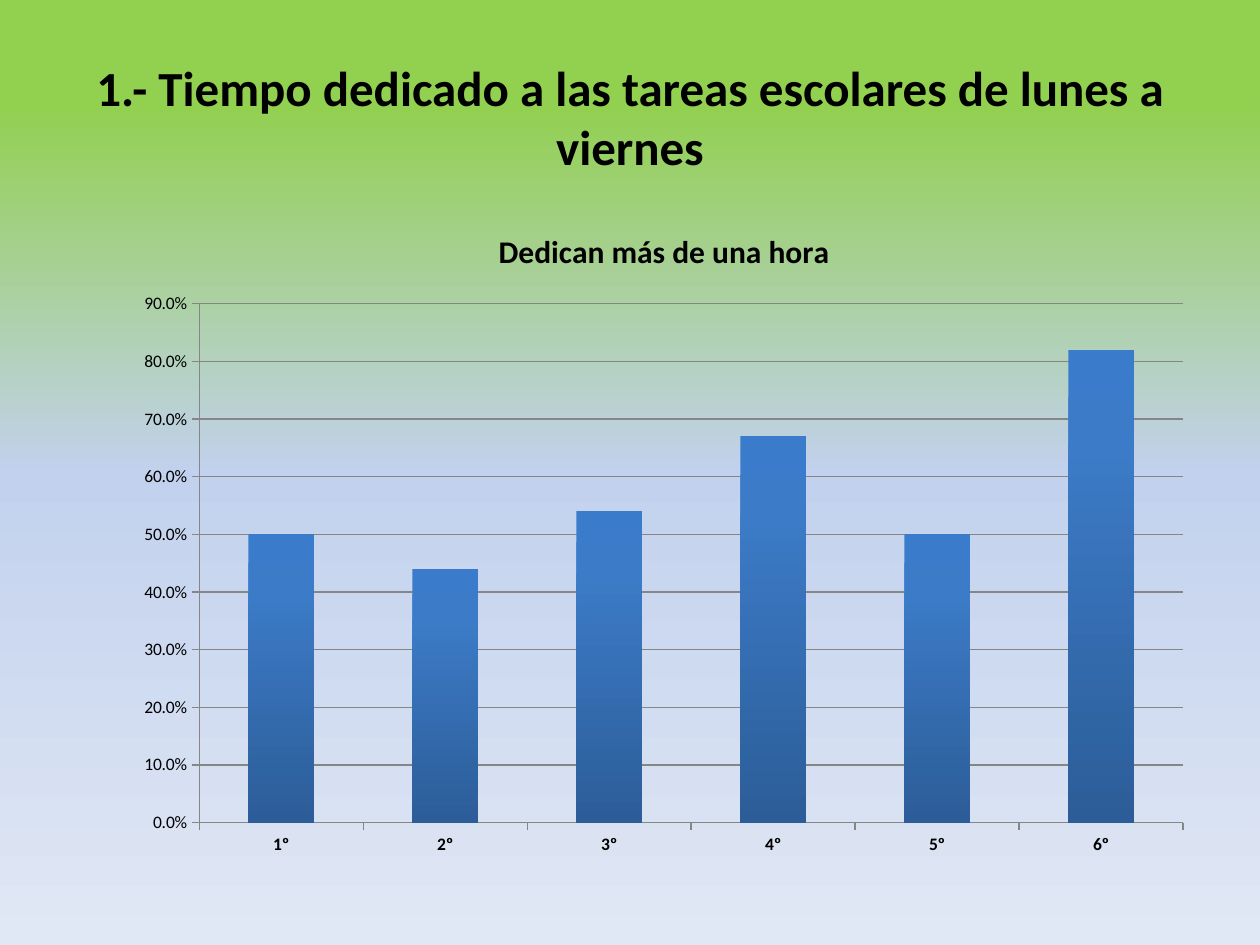
from lxml import etree
from pptx import Presentation
from pptx.chart.data import CategoryChartData
from pptx.dml.color import RGBColor
from pptx.enum.chart import XL_CHART_TYPE, XL_TICK_MARK
from pptx.enum.text import MSO_ANCHOR, PP_ALIGN
from pptx.oxml import parse_xml
from pptx.oxml.ns import nsdecls, qn
from pptx.util import Pt

COLUMNS = XL_CHART_TYPE.COLUMN_CLUSTERED
TICK_OUT = XL_TICK_MARK.OUTSIDE
MIDDLE = MSO_ANCHOR.MIDDLE
CENTER = PP_ALIGN.CENTER

# Content
TITLE = "1.- Tiempo dedicado a las tareas escolares de lunes a viernes"
CHART_TITLE = "Dedican más de una hora"
SHARES = {"1º": 0.5, "2º": 0.44, "3º": 0.54, "4º": 0.67, "5º": 0.5, "6º": 0.82}

# Style and positions (points; the plot area is in fractions of the chart)
FONT = "Calibri"
COLORS = {"text": "000000", "line": "868686"}
BACKGROUND_STOPS = [(11, "92D050"), (50, "C2D1ED"), (100, "E1E8F5")]
COLUMN_STOPS = [(0, "3A7CCB"), (20, "3C7BC7"), (100, "2C5D98")]
SLIDE_SIZE = (720, 540)
TITLE_BOX = (36, 21.6, 648, 90)
CHART_BOX = (70.6, 116.6, 617.8, 380.2)
PLOT_AREA = {"x": 0.07, "y": 0.15, "w": 0.91, "h": 0.78}


def style_font(font, size, bold=False):
    font.name = FONT
    font.size = Pt(size)
    font.bold = bold
    font.color.rgb = RGBColor.from_string(COLORS["text"])


def style_line(line):
    line.color.rgb = RGBColor.from_string(COLORS["line"])
    line.width = Pt(0.75)


def fill_downwards(fill, element, stops):
    """Give the element a vertical gradient with any number of stops."""
    fill.gradient()
    fill.gradient_angle = 270
    stop_list = element.find(".//" + qn("a:gsLst"))
    for old_stop in list(stop_list):
        stop_list.remove(old_stop)
    for position, color in stops:
        stop = etree.SubElement(stop_list, qn("a:gs"), pos=str(position * 1000))
        etree.SubElement(stop, qn("a:srgbClr"), val=color)


def place_plot_area(plot_area):
    for old_layout in plot_area.findall(qn("c:layout")):
        plot_area.remove(old_layout)
    modes = '<c:xMode val="edge"/><c:yMode val="edge"/>'
    sizes = "".join(f'<c:{key} val="{value}"/>' for key, value in PLOT_AREA.items())
    plot_area.insert(0, parse_xml(
        f'<c:layout {nsdecls("c")}><c:manualLayout><c:layoutTarget val="inner"/>'
        f"{modes}{sizes}</c:manualLayout></c:layout>"))


def add_title(slide):
    box = slide.shapes.add_textbox(*map(Pt, TITLE_BOX))
    frame = box.text_frame
    frame.word_wrap = True
    frame.vertical_anchor = MIDDLE
    paragraph = frame.paragraphs[0]
    paragraph.text = TITLE
    paragraph.alignment = CENTER
    style_font(paragraph.font, 28, bold=True)


def add_share_chart(slide):
    data = CategoryChartData(number_format="0.0%")
    data.categories = list(SHARES)
    data.add_series("Series 1", list(SHARES.values()))
    chart = slide.shapes.add_chart(COLUMNS, *map(Pt, CHART_BOX), data).chart
    style_font(chart.font, 10)
    chart.has_legend = False

    # Chart title
    chart.has_title = True
    paragraph = chart.chart_title.text_frame.paragraphs[0]
    paragraph.text = CHART_TITLE
    style_font(paragraph.font, 18, bold=True)
    chart.chart_title.include_in_layout = False

    # Axes
    for axis in (chart.category_axis, chart.value_axis):
        axis.major_tick_mark = TICK_OUT
        style_line(axis.format.line)
    style_font(chart.category_axis.tick_labels.font, 10, bold=True)
    value_axis = chart.value_axis
    value_axis.minimum_scale, value_axis.maximum_scale = 0, 0.9
    value_axis.major_unit = 0.1
    value_axis.tick_labels.number_format = "0.0%"
    value_axis.tick_labels.number_format_is_linked = False
    value_axis.has_major_gridlines = True
    style_line(value_axis.major_gridlines.format.line)

    # Columns
    plot = chart.plots[0]
    plot.gap_width = 150
    plot.vary_by_categories = False
    series = plot.series[0]
    fill_downwards(series.format.fill, series._element, COLUMN_STOPS)
    place_plot_area(series._element.getparent().getparent())


def main():
    presentation = Presentation()
    presentation.slide_width, presentation.slide_height = map(Pt, SLIDE_SIZE)
    slide = presentation.slides.add_slide(presentation.slide_layouts[6])
    fill_downwards(slide.background.fill, slide.element, BACKGROUND_STOPS)
    add_title(slide)
    add_share_chart(slide)
    presentation.save("out.pptx")


if __name__ == "__main__":
    main()
